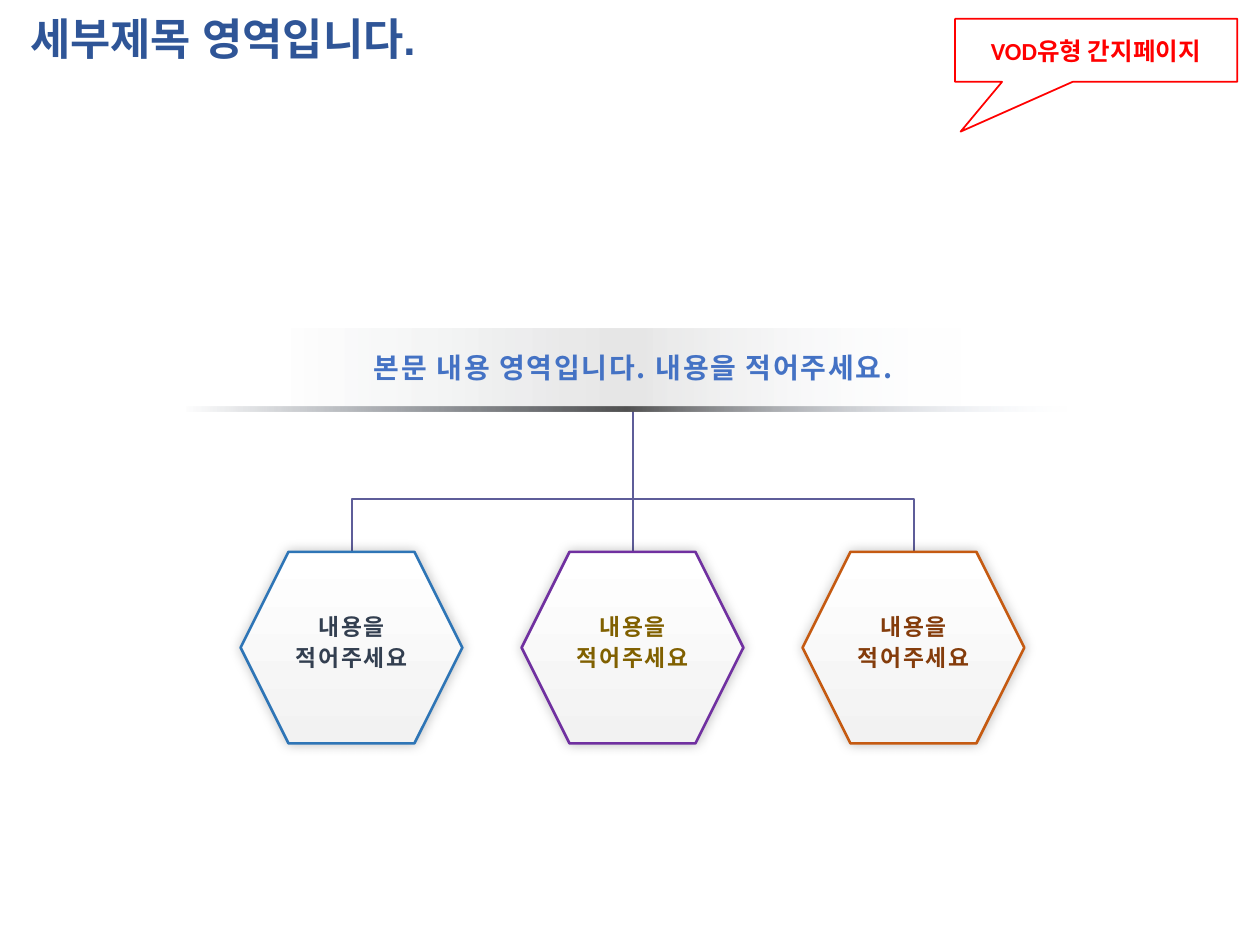
"""Build a divider slide with a heading band branching to three hexagons."""
import dataclasses

import pptx
import pptx.dml.color
import pptx.enum.shapes
import pptx.enum.text
import pptx.oxml
import pptx.oxml.ns
import pptx.util

SHAPE = pptx.enum.shapes.MSO_SHAPE
CONNECTOR = pptx.enum.shapes.MSO_CONNECTOR
ALIGN = pptx.enum.text.PP_ALIGN
ANCHOR = pptx.enum.text.MSO_ANCHOR
FIT = pptx.enum.text.MSO_AUTO_SIZE


@dataclasses.dataclass(frozen=True)
class Theme:
    """Colours, fonts and type sizes of the slide."""
    title: str = "2F5597"
    band_text: str = "4472C4"
    branch: str = "5E5D99"
    alert: str = "FF0000"
    paper: str = "FFFFFF"
    shadow: str = "000000"
    band: tuple = ((0, "333F50", 0), (50, "000000", 10), (100, "E1EBFB", 0))
    rule: tuple = ((0, "333F50", 0), (50, "525252", 100), (100, "E1EBFB", 0))
    face: tuple = ((0, "FFFFFF", 100), (100, "F2F2F2", 100))
    title_font: str = "Arial"
    body_font: str = "Noto Sans CJK KR"
    callout_font: str = "Calibri"
    title_size: int = 25
    band_size: int = 16
    callout_size: int = 14
    label_size: int = 13


class SlideBuilder:
    """Draws styled elements on a grid of 100 columns by 75 rows."""

    def __init__(self, deck, theme):
        self.theme = theme
        self.column = deck.slide_width / 100
        self.row = deck.slide_height / 75
        self.slide = deck.slides.add_slide(deck.slide_layouts[5])
        self.shapes = self.slide.shapes

    def grid(self, *cells):
        """Turn alternating column and row counts into lengths."""
        return [round(cell * (self.row if index % 2 else self.column))
                for index, cell in enumerate(cells)]

    def colour(self, value):
        """Return a colour object for a hex value."""
        return pptx.dml.color.RGBColor.from_string(value)

    def set_text(self, frame, text, font, size, colour, align=ALIGN.CENTER, leading=None, tracking=0):
        """Set text and format every run."""
        frame.word_wrap = True
        frame.text = text
        for para in frame.paragraphs:
            para.alignment = align
            para.line_spacing = leading
            for span in para.runs:
                span.font.name = font
                span.font.size = pptx.util.Pt(size)
                span.font.bold = True
                span.font.color.rgb = self.colour(colour)
                properties = span.font._element
                east_asian = properties.makeelement(pptx.oxml.ns.qn("a:ea"), {"typeface": font})
                properties.append(east_asian)
                if tracking:
                    properties.set("spc", str(tracking * 100))

    def title(self, text, area):
        """Place and format the title placeholder."""
        box = self.shapes.title
        box.left, box.top, box.width, box.height = self.grid(*area)
        frame = box.text_frame
        self.set_text(frame, text, self.theme.title_font, self.theme.title_size,
                      self.theme.title, ALIGN.LEFT, 0.9)
        frame.vertical_anchor = ANCHOR.MIDDLE
        frame.auto_size = FIT.NONE

    def text(self, text, area, size, colour, leading=None):
        """Add a centred text box."""
        frame = self.shapes.add_textbox(*self.grid(*area)).text_frame
        self.set_text(frame, text, self.theme.body_font, size, colour, leading=leading, tracking=1)
        frame.auto_size = FIT.SHAPE_TO_FIT_TEXT

    def shape(self, kind, area, line=None, width=1.5):
        """Add a shape without shadow or fill, outlined if a line colour is given."""
        shape = self.shapes.add_shape(kind, *self.grid(*area))
        shape.shadow.inherit = False
        shape.fill.background()
        if line:
            shape.line.color.rgb = self.colour(line)
            shape.line.width = pptx.util.Pt(width)
        else:
            shape.line.fill.background()
        return shape

    def gradient(self, shape, stops, angle=0):
        """Fill a shape with position, colour and opacity stops."""
        marks = "".join(
            f'<a:gs pos="{place * 1000}"><a:srgbClr val="{colour}">'
            f'<a:alpha val="{opacity * 1000}"/></a:srgbClr></a:gs>'
            for place, colour, opacity in stops)
        fill = pptx.oxml.parse_xml(
            f'<a:gradFill {pptx.oxml.ns.nsdecls("a")} rotWithShape="1"><a:gsLst>{marks}</a:gsLst>'
            f'<a:lin ang="{angle * 60000}" scaled="0"/></a:gradFill>')
        properties = shape.element.spPr
        properties.replace(properties.find(pptx.oxml.ns.qn("a:noFill")), fill)

    def bar(self, area, stops):
        """Add a horizontal bar that fades out at both ends."""
        self.gradient(self.shape(SHAPE.RECTANGLE, area), stops)

    def hexagon(self, area, line):
        """Add a softly shadowed hexagon."""
        shape = self.shape(SHAPE.HEXAGON, area, line)
        self.gradient(shape, self.theme.face, 90)
        shadow = pptx.oxml.parse_xml(
            f'<a:outerShdw {pptx.oxml.ns.nsdecls("a")} blurRad="{pptx.util.Pt(7)}" dist="0" dir="0" '
            f'algn="ctr" rotWithShape="0"><a:srgbClr val="{self.theme.shadow}">'
            '<a:alpha val="25000"/></a:srgbClr></a:outerShdw>')
        shape.element.spPr.find(pptx.oxml.ns.qn("a:effectLst")).append(shadow)

    def callout(self, text, area, tip):
        """Add an outlined speech callout pointing at the tip."""
        shape = self.shape(SHAPE.RECTANGULAR_CALLOUT, area, self.theme.alert, 1)
        shape.adjustments[0], shape.adjustments[1] = tip
        shape.fill.solid()
        shape.fill.fore_color.rgb = self.colour(self.theme.paper)
        self.set_text(shape.text_frame, text, self.theme.callout_font,
                      self.theme.callout_size, self.theme.alert)
        shape.text_frame.vertical_anchor = ANCHOR.MIDDLE

    def connector(self, kind, begin, end):
        """Add a branch line between two points given as lengths."""
        line = self.shapes.add_connector(kind, *map(round, (*begin, *end)))
        line.line.color.rgb = self.colour(self.theme.branch)
        line.line.width = pptx.util.Pt(1.5)
        properties = line.element.spPr
        properties.append(properties.makeelement(pptx.oxml.ns.qn("a:effectLst"), {}))
        return line

    def stem(self, begin, end):
        """Add a straight branch."""
        self.connector(CONNECTOR.STRAIGHT, self.grid(*begin), self.grid(*end))

    def elbow(self, begin, end, bend):
        """Add a branch that runs up, across and up again."""
        left, bottom, right, top = self.grid(*begin, *end)
        middle, centre = (left + right) / 2, (bottom + top) / 2
        rise, reach = (bottom - top) / 2, abs(right - left) / 2
        side = 1 if left < right else -1
        line = self.connector(CONNECTOR.ELBOW, (middle + side * rise, centre + reach),
                              (middle - side * rise, centre - reach))
        properties = line.element.spPr
        properties.xfrm.set("rot", str((90 if side > 0 else 270) * 60000))
        guides = properties.find(".//" + pptx.oxml.ns.qn("a:avLst"))
        share = round((begin[1] - bend) / (begin[1] - end[1]) * 100000)
        guides.append(guides.makeelement(
            pptx.oxml.ns.qn("a:gd"), {"name": "adj1", "fmla": f"val {share}"}))


def main():
    """Assemble and save the slide."""
    deck = pptx.Presentation()
    deck.slide_width, deck.slide_height = pptx.util.Inches(10), pptx.util.Inches(7.5)
    theme = Theme()
    page = SlideBuilder(deck, theme)
    page.title("세부제목 영역입니다.", (1.4, 0.8, 75.7, 4.9))

    trunk, pitch, first = 50.25, 22.3, 19.1
    for side in (1, -1):
        page.elbow((trunk + side * pitch, 56.4), (trunk, 32.6), 39.6)
    page.stem((trunk, 34.7), (trunk, 48.5))
    page.bar((22.6, 26.1, 54.2, 6.1), theme.band)

    branches = (("2E75B6", "333F50"), ("7030A0", "806000"), ("C55A11", "843C0B"))
    for index, (outline, ink) in enumerate(branches):
        left = first + index * pitch
        page.hexagon((left, 43.8, 17.6, 15.2), outline)
        page.text("내용을\n적어주세요", (left + 0.2, 47.8, 17.2, 6.1),
                  theme.label_size, ink, pptx.util.Pt(18))

    page.bar((14.7, 32.3, 70, 0.4), theme.rule)
    page.text("본문 내용 영역입니다. 내용을 적어주세요.", (17.9, 27.3, 64.7, 3.7),
              theme.band_size, theme.band_text)
    page.callout("VOD유형 간지페이지", (75.8, 1.5, 22.4, 5), (-0.48, 1.29))
    deck.save("out.pptx")


if __name__ == "__main__":
    main()
